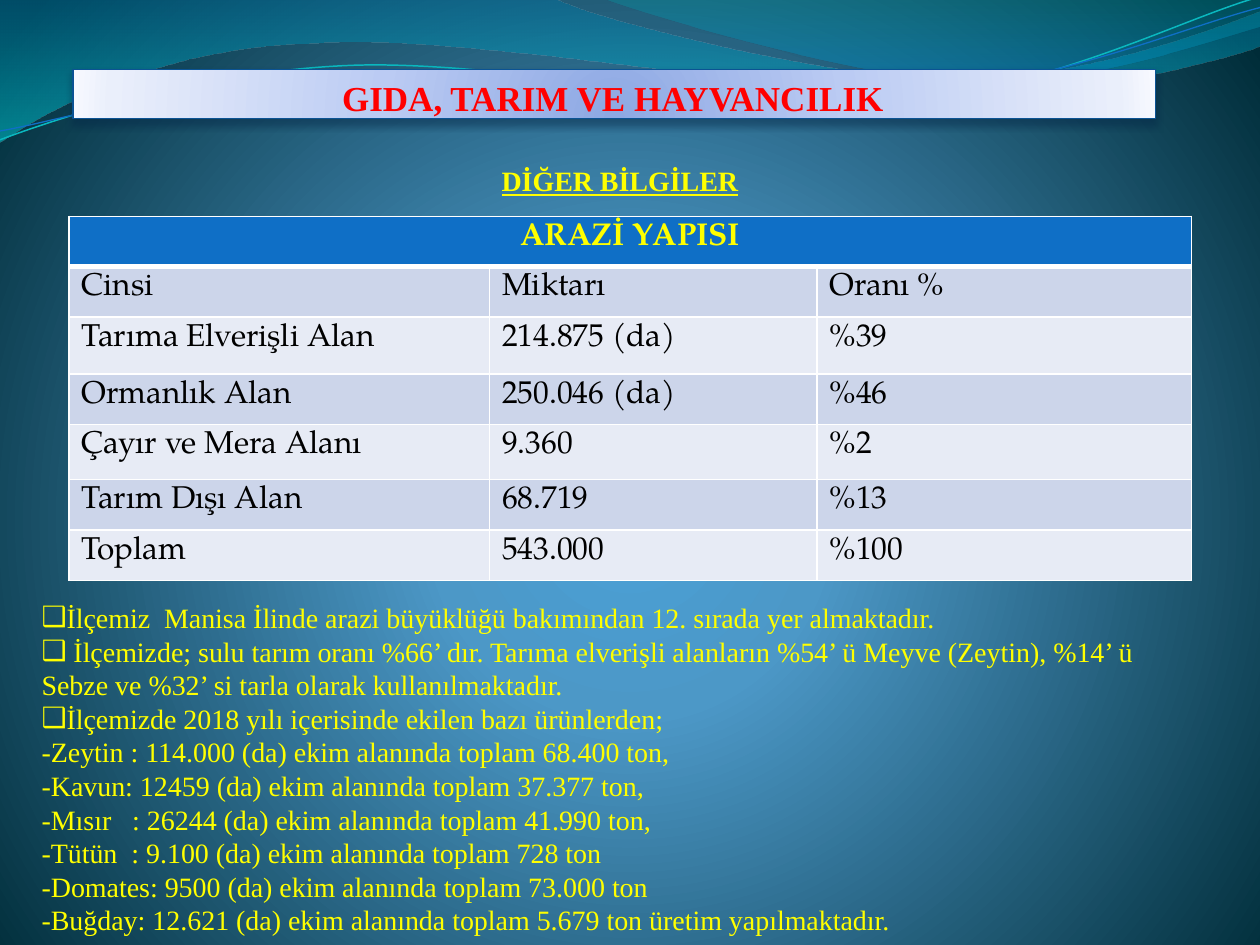
from dataclasses import dataclass

from pptx import Presentation
from pptx.dml.color import RGBColor
from pptx.enum.text import MSO_ANCHOR, MSO_AUTO_SIZE, PP_ALIGN
from pptx.oxml import parse_xml
from pptx.oxml.ns import nsdecls, qn
from pptx.util import Inches, Pt


@dataclass(frozen=True)
class Theme:
    serif: str = "Times New Roman"
    table_font: str = "TeX Gyre Pagella"
    title_size: int = 20
    text_size: int = 16
    table_size: int = 18
    line_pitch: float = 19.2
    red: str = "FF0000"
    yellow: str = "FFFF00"
    black: str = "000000"
    white: str = "FFFFFF"
    blue: str = "0F6FC6"
    teal: str = "0AB8BF"
    title_edge: str = "0B5394"
    shadow: str = "042747"
    bands: tuple = ("E7EBF5", "CCD5EA")
    backdrop: tuple = ((0, "4AA0D6"), (25, "4C98C7"), (100, "002C38"))
    banner: tuple = ((0, "8DA8E3"), (43, "BBCBF3"), (93, "EAEFFB"), (100, "F7F9FF"))
    broad_wave: tuple = ((0, "0074A1", 45), (100, "00C6CF", 55))
    corner_wave: tuple = ((0, "00A1A9", 30), (80, "008BBF", 45))


THEME = Theme()
WIDTH, HEIGHT = Inches(10), Inches(7.5)
LINES_BESIDE_TABLE = 12

# Outlines in inches: a pair is a line's end, six numbers are a Bezier curve.
BROAD_WAVE = [
    (0, 0), (4.4, -0.01), (4.76, 0.17, 6.64, 0.63, 7.58, 0.63),
    (8.53, 0.63, 9.58, 0.26, 10, 0.09), (10.01, 0.36),
    (9.83, 0.44, 8.7, 0.76, 7.46, 0.75), (6.22, 0.75, 3.82, 0.28, 2.57, 0.34),
    (1.29, 0.36, 0.46, 0.83, -0.01, 1.13), (0, 0),
]
CORNER_WAVE = [
    (4.79, -0.01), (5.09, 0.11, 6.82, 0.62, 7.69, 0.65),
    (8.56, 0.69, 9.61, 0.32, 10, 0.21), (10, 0), (4.79, -0.01),
]
TEAL_STRAND = [
    (0, 1.11), (0.48, 0.93, 1.58, 0.57, 2.77, 0.52),
    (3.95, 0.47, 5.93, 0.89, 7.13, 0.8), (8.33, 0.71, 9.38, 0.15, 9.98, -0.02),
]
BLUE_STRAND = [
    (0, 1.04), (0.47, 0.96, 1.64, 0.61, 2.83, 0.56),
    (4.03, 0.51, 5.97, 0.84, 7.17, 0.75), (8.36, 0.67, 9.41, 0.21, 10, 0.06),
]

LAND_ROWS = [
    ("ARAZİ YAPISI", "", ""),
    ("Cinsi", "Miktarı", "Oranı %"),
    ("Tarıma Elverişli Alan", "214.875 (da)", "%39"),
    ("Ormanlık Alan", "250.046 (da)", "%46"),
    ("Çayır ve Mera Alanı", "9.360", "%2"),
    ("Tarım Dışı Alan", "68.719", "%13"),
    ("Toplam", "543.000", "%100"),
]
COLUMN_WIDTHS = (3.34, 2.6, 2.97)
ROW_HEIGHTS = (0.4, 0.4, 0.45, 0.4, 0.44, 0.4, 0.4)

HEADING = "DİĞER BİLGİLER"
BULLETS = [
    "İlçemiz  Manisa İlinde arazi büyüklüğü bakımından 12. sırada yer almaktadır.",
    " İlçemizde; sulu tarım oranı %66’ dır. Tarıma elverişli alanların %54’ ü "
    "Meyve (Zeytin), %14’ ü Sebze ve %32’ si tarla olarak kullanılmaktadır.",
    "İlçemizde 2018 yılı içerisinde ekilen bazı ürünlerden;",
]
CROPS = [
    "-Zeytin : 114.000 (da) ekim alanında toplam 68.400 ton,",
    "-Kavun: 12459 (da) ekim alanında toplam 37.377 ton,",
    "-Mısır   : 26244 (da) ekim alanında toplam 41.990 ton,",
    "-Tütün  : 9.100 (da) ekim alanında toplam 728 ton",
    "-Domates: 9500 (da) ekim alanında toplam 73.000 ton",
    "-Buğday: 12.621 (da) ekim alanında toplam 5.679 ton üretim yapılmaktadır.",
]


def area(left, top, width, height):
    """Turn percentages of the slide into left, top, width and height."""
    return [int(share * side / 100) for share, side in
            zip((left, top, width, height), (WIDTH, HEIGHT) * 2)]


def place(shape, *shares):
    shape.left, shape.top, shape.width, shape.height = area(*shares)


def set_font(para, name, size, color, bold=False, underline=False):
    font = para.font
    font.name, font.size, font.bold, font.underline = name, Pt(size), bold, underline
    font.color.rgb = RGBColor.from_string(color)


def set_gradient(fill, properties, stops, direction):
    """Put gradient stops (position, colour, optional opacity) on a fill."""
    fill.solid()
    marks = "".join(
        f'<a:gs pos="{pos * 1000}"><a:srgbClr val="{color}">'
        + "".join(f'<a:alpha val="{share * 1000}"/>' for share in opacity)
        + "</a:srgbClr></a:gs>" for pos, color, *opacity in stops)
    gradient = parse_xml(f'<a:gradFill {nsdecls("a")} rotWithShape="1">'
                         f"<a:gsLst>{marks}</a:gsLst>{direction}</a:gradFill>")
    properties.replace(properties.find(qn("a:solidFill")), gradient)


def radial(left, top, right, bottom):
    return (f'<a:path path="circle"><a:fillToRect l="{left * 1000}" t="{top * 1000}" '
            f'r="{right * 1000}" b="{bottom * 1000}"/></a:path>')


def draw_outline(page, outline, closed):
    """Draw straight segments between the ends, then bend those that are curves."""
    ends = [(Inches(segment[-2]), Inches(segment[-1])) for segment in outline]
    builder = page.shapes.build_freeform(*ends[0], scale=1.0)
    builder.add_line_segments(ends[1:], close=closed)
    shape = builder.convert_to_shape()
    shape.shadow.inherit = False
    lines = list(shape._element.iter(qn("a:lnTo")))
    for line, segment in zip(lines, outline[1:]):
        if len(segment) == 6:
            points = "".join(
                f'<a:pt x="{Inches(x) - shape.left}" y="{Inches(y) - shape.top}"/>'
                for x, y in zip(segment[::2], segment[1::2]))
            curve = parse_xml(f'<a:cubicBezTo {nsdecls("a")}>{points}</a:cubicBezTo>')
            line.getparent().replace(line, curve)
    return shape


def add_wave(page, outline, stops):
    wave = draw_outline(page, outline, True)
    wave.line.fill.background()
    set_gradient(wave.fill, wave._element.spPr, stops, '<a:lin ang="5400000" scaled="0"/>')


def add_strand(page, outline, color, weight):
    strand = draw_outline(page, outline, False)
    strand.fill.background()
    strand.line.color.rgb = RGBColor.from_string(color)
    strand.line.width = Pt(weight)


def add_title(page, text):
    title = page.shapes.title
    page.shapes._spTree.append(title._element)  # in front of the waves
    place(title, 5.8, 7.33, 85.9, 5.2)
    properties = title._element.spPr
    set_gradient(title.fill, properties, THEME.banner, radial(50, 130, 50, -30))
    title.line.color.rgb = RGBColor.from_string(THEME.title_edge)
    title.line.width = Pt(0.75)
    properties.append(parse_xml(
        f'<a:effectLst {nsdecls("a")}><a:outerShdw blurRad="{Pt(4.5)}" dist="{Pt(3)}" '
        f'dir="5400000" rotWithShape="0"><a:srgbClr val="{THEME.shadow}">'
        '<a:alpha val="48000"/></a:srgbClr></a:outerShdw></a:effectLst>'))
    frame = title.text_frame
    frame.text, frame.auto_size = text, MSO_AUTO_SIZE.NONE
    frame.vertical_anchor = MSO_ANCHOR.BOTTOM
    frame.margin_left = frame.margin_top = frame.margin_bottom = 0
    frame.margin_right = Inches(0.02)
    para = frame.paragraphs[0]
    para.alignment = PP_ALIGN.CENTER
    set_font(para, THEME.serif, THEME.title_size, THEME.red, bold=True)


def set_bullet(para, mark):
    properties = para._p.get_or_add_pPr()
    properties.set("marL", "0")
    properties.set("indent", "0")
    properties.find(qn("a:defRPr")).addprevious(parse_xml(f'<a:{mark} {nsdecls("a")}/>'))


def add_facts(page):
    """Fill the body: a heading, room for the table, then the list."""
    body = page.placeholders[1]
    page.shapes._spTree.append(body._element)
    place(body, 2.3, 16.67, 93.8, 83.33)
    frame = body.text_frame
    frame.text = "\n".join([HEADING] + BULLETS + CROPS)
    frame.auto_size = MSO_AUTO_SIZE.NONE
    heading, *facts = frame.paragraphs
    heading.alignment, heading.space_before = PP_ALIGN.CENTER, Pt(0)
    set_font(heading, THEME.serif, THEME.text_size, THEME.yellow, bold=True, underline=True)
    set_bullet(heading, "buNone")
    for number, para in enumerate(facts):
        para.space_before, para.line_spacing = Pt(0), Pt(THEME.line_pitch)
        set_font(para, THEME.serif, THEME.text_size, THEME.yellow)
        set_bullet(para, 'buChar char="❑"' if number < len(BULLETS) else "buNone")
    facts[0].space_before = Pt(LINES_BESIDE_TABLE * THEME.line_pitch)


def set_borders(cell, bottom):
    for side, weight in zip("LRTB", (1, 1, 1, bottom)):
        cell._tc.get_or_add_tcPr().append(parse_xml(
            f'<a:ln{side} {nsdecls("a")} w="{Pt(weight)}"><a:solidFill>'
            f'<a:srgbClr val="{THEME.white}"/></a:solidFill></a:ln{side}>'))


def add_land_table(page):
    table = page.shapes.add_table(len(LAND_ROWS), len(COLUMN_WIDTHS),
                                  *area(5.46, 22.9, 89.1, 38.53)).table
    for column, width in zip(table.columns, COLUMN_WIDTHS):
        column.width = Inches(width)
    for number, (row, height) in enumerate(zip(table.rows, ROW_HEIGHTS)):
        row.height = Inches(height)
        heading = number == 0
        for cell, text in zip(row.cells, LAND_ROWS[number]):
            set_borders(cell, 3 if heading else 1)
            cell.fill.solid()
            cell.fill.fore_color.rgb = RGBColor.from_string(
                THEME.blue if heading else THEME.bands[number % 2])
            cell.text = text
            para = cell.text_frame.paragraphs[0]
            para.alignment = PP_ALIGN.CENTER if heading else PP_ALIGN.LEFT
            set_font(para, THEME.table_font, THEME.table_size,
                     THEME.yellow if heading else THEME.black, bold=heading)
    table.cell(0, 0).merge(table.cell(0, len(COLUMN_WIDTHS) - 1))


def main():
    deck = Presentation()
    deck.slide_width, deck.slide_height = WIDTH, HEIGHT
    page = deck.slides.add_slide(deck.slide_layouts[1])
    set_gradient(page.background.fill, page._element.cSld.bg.bgPr, THEME.backdrop,
                 radial(10, 110, 10, 100))
    add_wave(page, BROAD_WAVE, THEME.broad_wave)
    add_wave(page, CORNER_WAVE, THEME.corner_wave)
    add_strand(page, TEAL_STRAND, THEME.teal, 0.85)
    add_strand(page, BLUE_STRAND, THEME.blue, 0.75)
    add_title(page, "GIDA, TARIM VE HAYVANCILIK")
    add_facts(page)
    add_land_table(page)
    deck.save("out.pptx")


if __name__ == "__main__":
    main()
